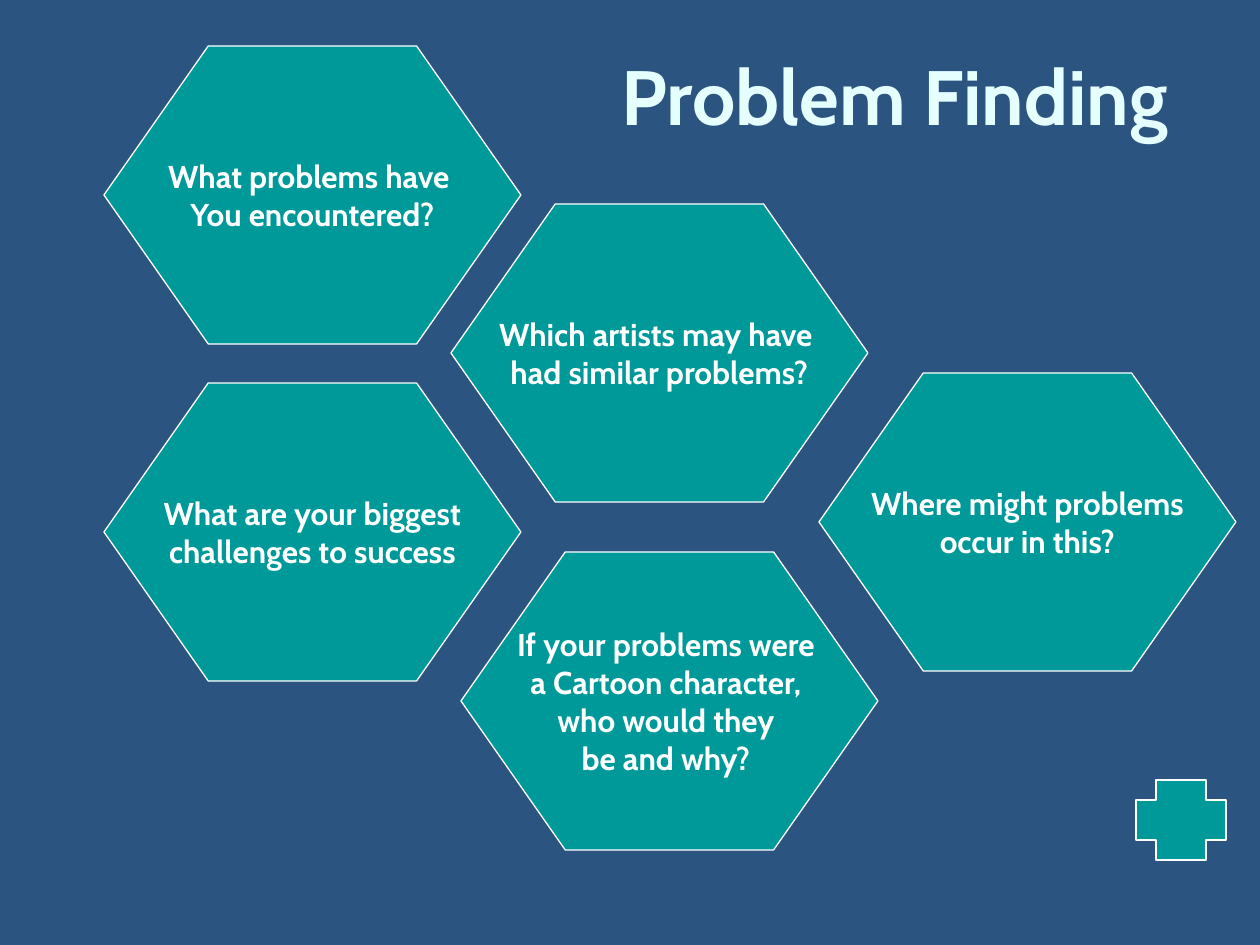
from pptx import Presentation
from pptx.dml.color import RGBColor
from pptx.enum.shapes import MSO_SHAPE
from pptx.enum.text import MSO_ANCHOR, PP_ALIGN
from pptx.util import Emu, Pt

HEXAGON, CROSS = MSO_SHAPE.HEXAGON, MSO_SHAPE.CROSS
MIDDLE, CENTER = MSO_ANCHOR.MIDDLE, PP_ALIGN.CENTER
TITLE_ONLY = 5
EMU_PER_PX = 914400 // 126
FONT = "Cabin"
COLORS = {
    "background": "2B5481",
    "title": "E5FFFF",
    "teal": "009999",
    "white": "FFFFFF",
}
HEX_W, HEX_H = 417, 298
QUESTIONS = [
    (104, 46, ["What problems have ", "You encountered?"]),
    (461, 552, ["If your problems were \na Cartoon character, ",
                "who would they \nbe and why? "]),
    (819, 373, ["Where might problems", "occur in this?"]),
    (451, 204, ["Which artists may have ", "had similar problems?"]),
    (104, 383, ["What are your biggest", "challenges to success"]),
]


def px(n):
    return Emu(n * EMU_PER_PX)


def rgb(name):
    return RGBColor.from_string(COLORS[name])


def add_run(p, text, size, color):
    r = p.add_run()
    r.text = text
    r.font.name = FONT
    r.font.size = Pt(size)
    r.font.bold = True
    r.font.color.rgb = rgb(color)


def write_text(tf, paragraphs, size, color):
    tf.vertical_anchor = MIDDLE
    for i, text in enumerate(paragraphs):
        p = tf.add_paragraph() if i else tf.paragraphs[0]
        p.alignment = CENTER
        for j, line in enumerate(text.split("\n")):
            if j:
                p.add_line_break()
            add_run(p, line, size, color)


def set_title(s, text, x, y, w, h):
    sp = s.shapes.title
    sp.left, sp.top, sp.width, sp.height = px(x), px(y), px(w), px(h)
    write_text(sp.text_frame, [text], 44, "title")


def add_teal_shape(s, kind, x, y, w, h):
    sp = s.shapes.add_shape(kind, px(x), px(y), px(w), px(h))
    sp.shadow.inherit = False
    sp.fill.solid()
    sp.fill.fore_color.rgb = rgb("teal")
    sp.line.color.rgb = rgb("white")
    sp.line.width = Pt(0.75)
    sp.adjustments[0] = 0.25
    return sp


def add_question(s, x, y, paragraphs):
    sp = add_teal_shape(s, HEXAGON, x, y, HEX_W, HEX_H)
    sp.adjustments[0] = 0.35
    sp.text_frame.word_wrap = False
    write_text(sp.text_frame, paragraphs, 18, "white")


def main():
    prs = Presentation()
    prs.slide_width, prs.slide_height = px(1260), px(945)
    s = prs.slides.add_slide(prs.slide_layouts[TITLE_ONLY])
    s.background.fill.solid()
    s.background.fill.fore_color.rgb = rgb("background")
    set_title(s, "Problem Finding", 530, 0, 730, 189)
    for x, y, paragraphs in QUESTIONS:
        add_question(s, x, y, paragraphs)
    add_teal_shape(s, CROSS, 1136, 780, 90, 80)
    prs.save("out.pptx")


if __name__ == "__main__":
    main()
